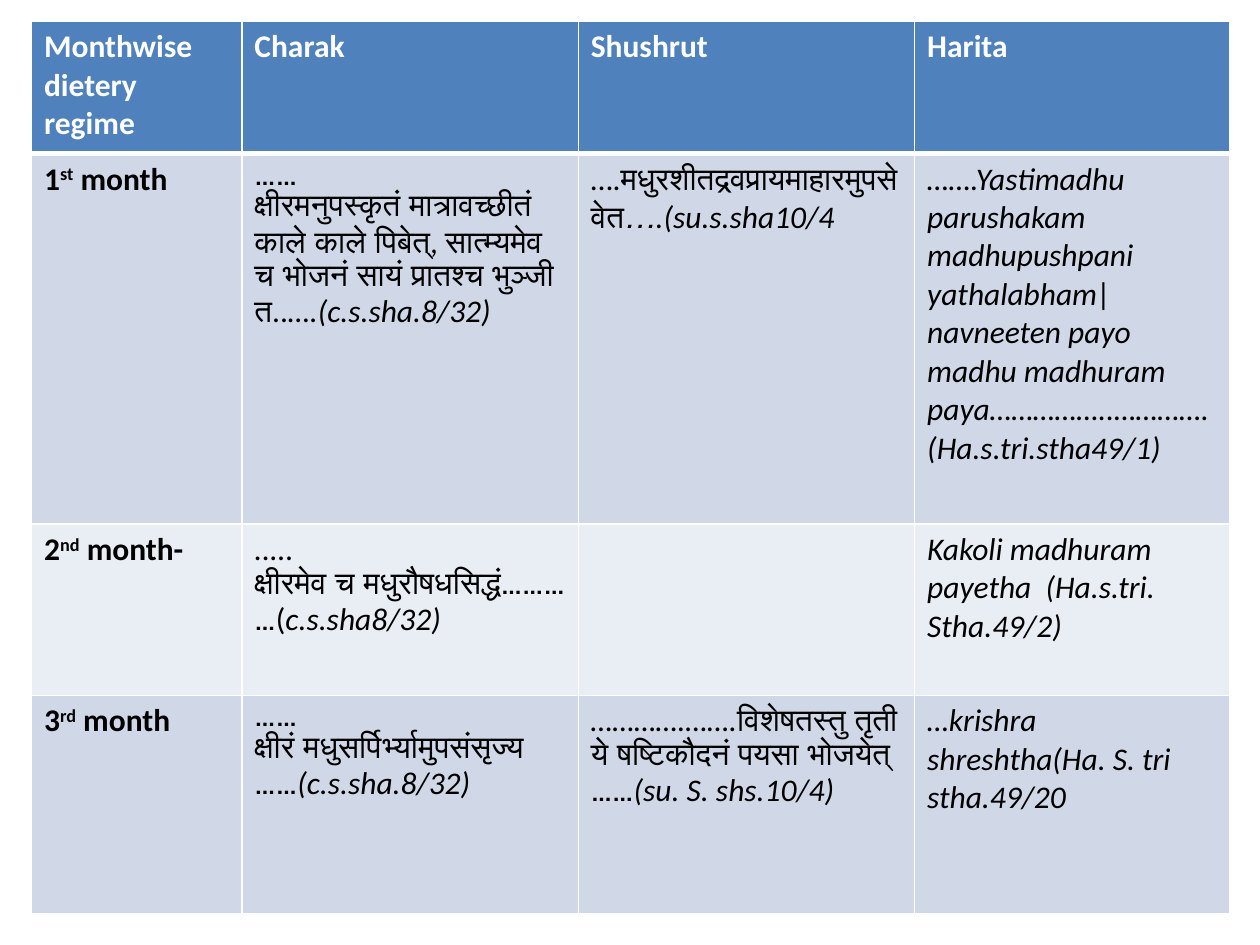
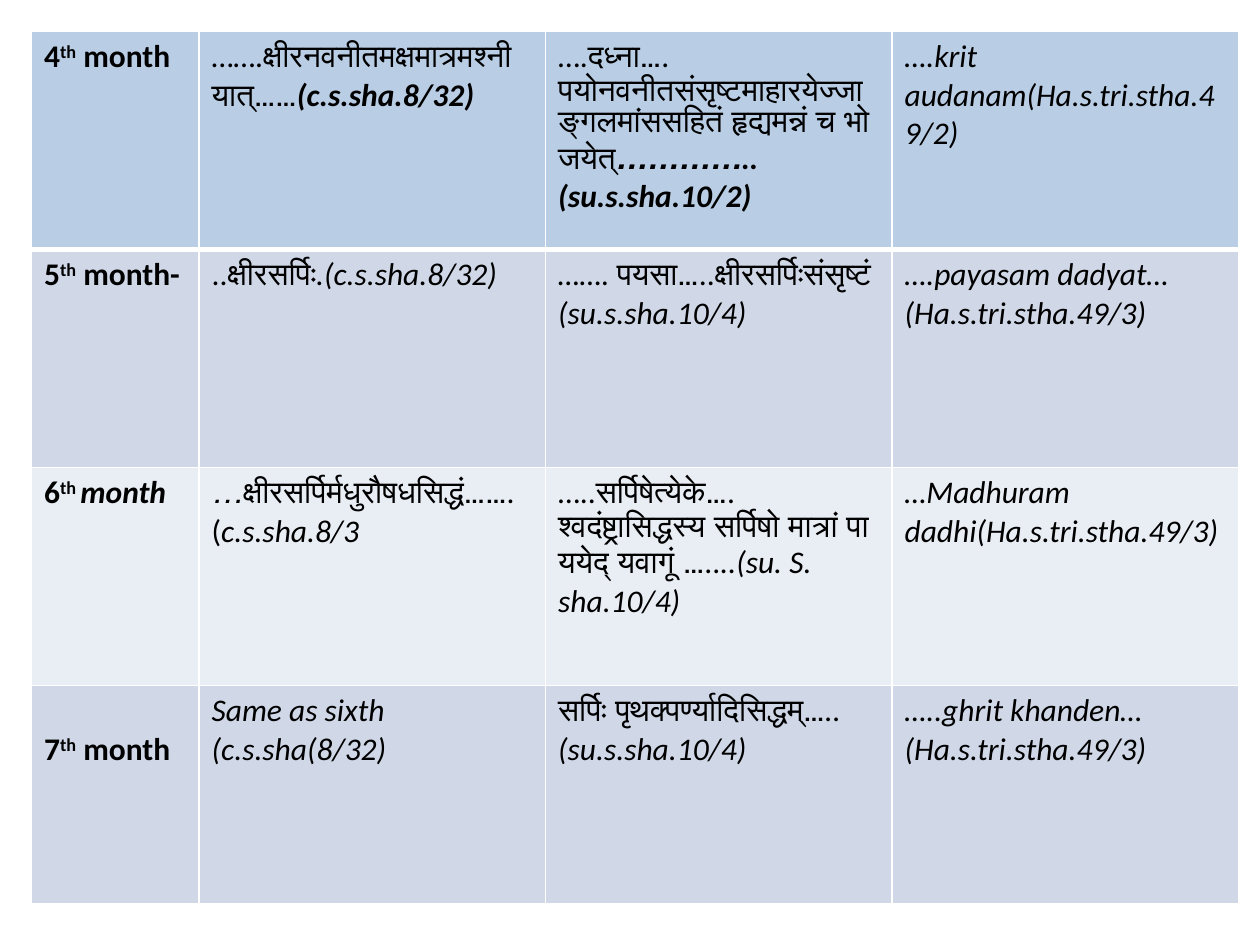
import pptx
import pptx.util
import pptx.dml.color
import pptx.oxml
import pptx.oxml.ns
from pptx.util import Inches

RGBColor = pptx.dml.color.RGBColor
WHITE = RGBColor(0xFF, 0xFF, 0xFF)
BLACK = RGBColor(0, 0, 0)
HEADER_BLUE = RGBColor(0x4F, 0x81, 0xBD)
LIGHT_BLUE = RGBColor(0xB9, 0xCD, 0xE5)
BANDS = (RGBColor(0xD0, 0xD8, 0xE8), RGBColor(0xE9, 0xED, 0xF4))
FONT = "Calibri"
NBSP = chr(160)  # written as ~ in the verses, which break only at plain spaces


def month(number, suffix, tail=" month", tail_style="b"):
    return [(number, "b"), (suffix, "bs"), (tail, tail_style)]


def verse(text, source, source_style="i"):
    """An upright verse followed by its slanted source."""
    return [(text, ""), (source, source_style)]


def italic(text):
    return [(text, "i")]


EARLY_MONTHS = [
    [[(name, "b")] for name in
     ("Monthwise dietery regime", "Charak", "Shushrut", "Harita")],
    [month("1", "st"),
     verse("……क्षीरमनुपस्कृतं~मात्रावच्छीतं~काले~काले~पिबेत्,~सात्म्यमेव"
           "~च~भोजनं~सायं~प्रातश्च~भुञ्जीत..", "….(c.s.sha.8/32)"),
     verse("….मधुरशीतद्रवप्रायमाहारमुपसेवेत", "….(su.s.sha10/4"),
     italic("…….Yastimadhu parushakam madhupushpani  yathalabham|navneeten "
            "payo madhu madhuram paya……………..………….(Ha.s.tri.stha49/1)")],
    [month("2", "nd", " month-"),
     italic("..") + verse("…क्षीरमेव~च~मधुरौषधसिद्धं…………(", "c.s.sha8/32)"),
     [],
     italic("Kakoli madhuram payetha  (Ha.s.tri. Stha.49/2)")],
    [month("3", "rd"),
     verse("……क्षीरं~मधुसर्पिर्भ्यामुपसंसृज्य ……", "(c.s.sha.8/32)"),
     italic("………….…….") + verse("विशेषतस्तु~तृतीये~षष्टिकौदनं~पयसा~भोजयेत् ……",
                                "(su. S. shs.10/4)"),
     italic("…krishra shreshtha(Ha. S. tri stha.49/20")],
]

LATER_MONTHS = [
    [month("4", "th"),
     verse("…….क्षीरनवनीतमक्षमात्रमश्नीयात्……", "(c.s.sha.8/32)", "bi"),
     verse("….दध्ना…. पयोनवनीतसंसृष्टमाहारयेज्जाङ्गलमांससहितं~हृद्यमन्नं~च~भोजयेत्",
           "…………..(su.s.sha.10/2)", "bi"),
     italic("….krit audanam(Ha.s.tri.stha.49/2)")],
    [month("5", "th", " month-"),
     verse("..क्षीरसर्पिः", ".(c.s.sha.8/32)"),
     italic("…….") + verse(" पयसा…..क्षीरसर्पिःसंसृष्टं ", "(su.s.sha.10/4)"),
     italic("….payasam dadyat…(Ha.s.tri.stha.49/3)")],
    [month("6", "th ", "month", "bi"),
     italic("…") + verse("क्षीरसर्पिर्मधुरौषधसिद्धं…….(", "c.s.sha.8/3"),
     verse("…..सर्पिषेत्येके…. श्वदंष्ट्रासिद्धस्य~सर्पिषो~मात्रां~पाययेद्~यवागूं~…..",
           "..(su. S. sha.10/4)"),
     italic("…Madhuram dadhi(Ha.s.tri.stha.49/3)")],
    [month("7", "th"),
     italic("Same as sixth (c.s.sha(8/32)"),
     verse("सर्पिः~पृथक्पर्ण्यादिसिद्धम्…", "..(su.s.sha.10/4)"),
     italic("…..ghrit khanden…(Ha.s.tri.stha.49/3)")],
]


def set_borders(cell, top=1, bottom=1):
    """White cell borders; call before the fill, which must follow them."""
    tcPr = cell._tc.get_or_add_tcPr()
    for side, points in (("L", 1), ("R", 1), ("T", top), ("B", bottom)):
        tcPr.append(pptx.oxml.parse_xml(
            f'<a:ln{side} {pptx.oxml.ns.nsdecls("a")} w="{points * 12700}">'
            f'<a:solidFill><a:srgbClr val="{WHITE}"/></a:solidFill>'
            f'</a:ln{side}>'))


def write_runs(cell, runs, color):
    """Styles: b bold, i italic, s superscript."""
    p = cell.text_frame.paragraphs[0]
    for text, style in runs:
        r = p.add_run()
        r.text = text.replace("~", NBSP)
        r.font.name = FONT
        r.font.size = pptx.util.Pt(18)
        r.font.color.rgb = color
        r.font.bold = "b" in style
        r.font.italic = "i" in style
        if "s" in style:
            r._r.get_or_add_rPr().set("baseline", "30000")


def add_diet_table(s, top, widths, heights, rows, first_fill, first_color):
    frame = s.shapes.add_table(len(rows), len(widths), Inches(0.25), Inches(top),
                               Inches(sum(widths)), Inches(sum(heights)))
    table = frame.table
    table.first_row = table.horz_banding = False
    for column, width in zip(table.columns, widths):
        column.width = Inches(width)
    for i, (row, height) in enumerate(zip(rows, heights)):
        table.rows[i].height = Inches(height)
        for j, runs in enumerate(row):
            cell = table.cell(i, j)
            set_borders(cell, top=3 if i == 1 else 1, bottom=3 if i == 0 else 1)
            cell.fill.solid()
            cell.fill.fore_color.rgb = BANDS[(i - 1) % 2] if i else first_fill
            write_runs(cell, runs, BLACK if i else first_color)
    return table


def main():
    prs = pptx.Presentation()
    prs.slide_width, prs.slide_height = Inches(10), Inches(7.5)
    blank = prs.slide_layouts[6]

    add_diet_table(prs.slides.add_slide(blank), 0.17, [1.67, 2.67, 2.67, 2.5],
                   [1.05, 2.94, 1.36, 1.73], EARLY_MONTHS, HEADER_BLUE, WHITE)

    later = add_diet_table(prs.slides.add_slide(blank), 0.25, [1.33] + [2.75] * 3,
                           [1.73] * 4, LATER_MONTHS, LIGHT_BLUE, BLACK)
    later.cell(3, 0).margin_top = Inches(0.36)  # seventh month sits one line lower

    prs.save("out.pptx")


if __name__ == "__main__":
    main()
